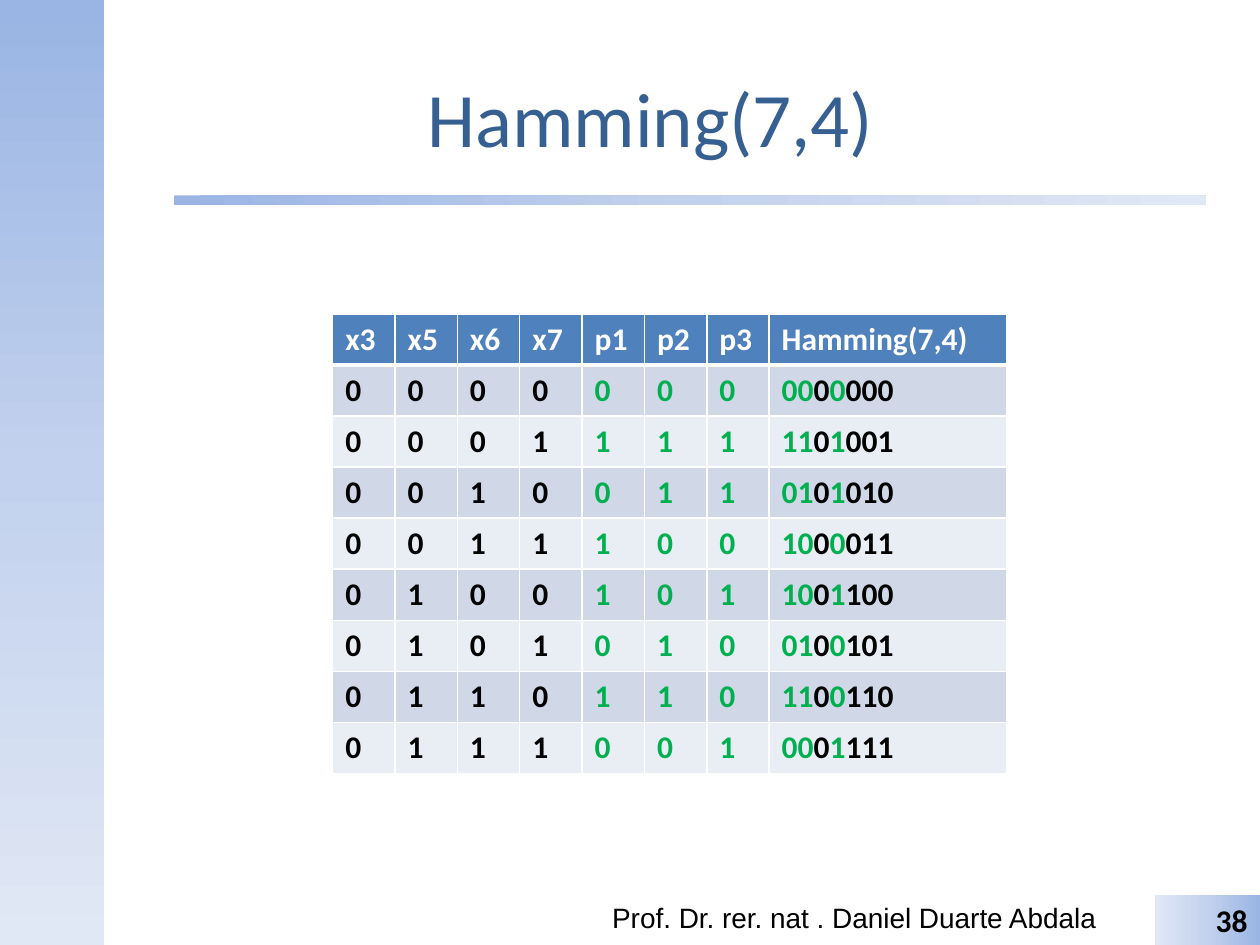
import copy
import itertools

import pptx
import pptx.dml.color
import pptx.enum.shapes
import pptx.enum.text
import pptx.oxml
import pptx.oxml.ns
import pptx.util

SLIDE_W, SLIDE_H = 10, 7.5
SHAPES = pptx.enum.shapes.MSO_SHAPE
ALIGN = pptx.enum.text.PP_ALIGN
MIDDLE = pptx.enum.text.MSO_ANCHOR.MIDDLE
GRADIENT = [(0, "9AB5E4"), (0.5, "C2D1ED"), (1, "E1E8F5")]
BLACK, WHITE, GREEN = "000000", "FFFFFF", "00B050"
HEADER_FILL, BAND_FILLS = "4F81BD", ("E9EDF4", "D0D8E8")
SIDE_W = 0.83  # width of the side band and of the page number tile
FOOTER_H = 0.4


def rgb(value):
    return pptx.dml.color.RGBColor.from_string(value)


def inches(box):
    return [pptx.util.Inches(length) for length in box]


def write(paragraph, pieces, align=ALIGN.LEFT, name="Calibri", size=18, bold=False):
    """Add (text, colour) pieces as runs of one paragraph."""
    paragraph.alignment = align
    font_values = {"name": name, "size": pptx.util.Pt(size), "bold": bold}
    for text, colour in pieces:
        run = paragraph.add_run()
        run.text = text
        run.font.color.rgb = rgb(colour)
        for key, value in font_values.items():
            setattr(run.font, key, value)


def gradient_bar(slide, box, kind, angle):
    """Add a bar whose gradient runs at a counter-clockwise angle."""
    bar = slide.shapes.add_shape(kind, *inches(box))
    bar.shadow.inherit = False
    bar.line.fill.background()
    bar.fill.gradient()
    bar.fill.gradient_angle = angle
    stop_list = bar._element.spPr.find(".//" + pptx.oxml.ns.qn("a:gsLst"))
    stop_list.append(copy.deepcopy(stop_list[-1]))
    for stop, (position, colour) in zip(bar.fill.gradient_stops, GRADIENT):
        stop.position = position
        stop.color.rgb = rgb(colour)
    return bar


def heading(slide, box):
    """Title with the rule below it."""
    left, top, width, height = box
    title = slide.shapes.title
    for key, value in zip(("left", "top", "width", "height"), inches(box)):
        setattr(title, key, value)
    title.text_frame.vertical_anchor = MIDDLE
    write(title.text_frame.paragraphs[0], [("Hamming(7,4)", "376092")],
          ALIGN.CENTER, size=44)
    gradient_bar(slide, (left + 0.55, top + height, 8.19, 0.08),
                 SHAPES.ROUNDED_RECTANGLE, 0)


def code_rows():
    """Cells of each row, with parity bits in green."""
    for x5, x6, x7 in itertools.product((0, 1), repeat=3):
        x3 = 0
        parity = [x3 ^ x5 ^ x7, x3 ^ x6 ^ x7, x5 ^ x6 ^ x7]
        p1, p2, p3 = parity
        data_cells = [[(str(bit), BLACK)] for bit in (x3, x5, x6, x7)]
        parity_cells = [[(str(bit), GREEN)] for bit in parity]
        codeword = [(f"{p1}{p2}", GREEN), (f"{x3}", BLACK),
                    (f"{p3}", GREEN), (f"{x5}{x6}{x7}", BLACK)]
        yield data_cells + parity_cells + [codeword]


def outline_cell(cell, bottom_width):
    properties = cell._tc.get_or_add_tcPr()
    sides = (("lnL", 1), ("lnR", 1), ("lnT", 1), ("lnB", bottom_width))
    for index, (side, width) in enumerate(sides):
        properties.insert(index, pptx.oxml.parse_xml(
            f'<a:{side} {pptx.oxml.ns.nsdecls("a")} w="{pptx.util.Pt(width)}">'
            f'<a:solidFill><a:srgbClr val="{WHITE}"/></a:solidFill></a:{side}>'))


def code_table(slide, box):
    names = ["x3", "x5", "x6", "x7", "p1", "p2", "p3", "Hamming(7,4)"]
    rows = [[[(name, WHITE)] for name in names], *code_rows()]
    bit_width = 0.495
    table = slide.shapes.add_table(len(rows), len(names), *inches(box)).table
    for column in table.columns:
        column.width = pptx.util.Inches(bit_width)
    table.columns[len(names) - 1].width = pptx.util.Inches(
        box[2] - bit_width * (len(names) - 1))
    for r, row in enumerate(rows):
        for c, pieces in enumerate(row):
            cell = table.cell(r, c)
            cell.fill.solid()
            cell.fill.fore_color.rgb = rgb(BAND_FILLS[r % 2] if r else HEADER_FILL)
            outline_cell(cell, 1 if r else 3)
            write(cell.text_frame.paragraphs[0], pieces, bold=True)


def footer(slide, box):
    """Author on the left, page number tile at the right end."""
    left, top, width, height = box
    author = slide.shapes.add_textbox(*inches((left, top, 4.19, height)))
    author.text_frame.word_wrap = True
    write(author.text_frame.paragraphs[0],
          [("Prof. Dr. rer. nat . Daniel Duarte Abdala", BLACK)],
          name="Arial", size=16)
    page = gradient_bar(slide, (left + width - SIDE_W, top, SIDE_W, height),
                        SHAPES.RECTANGLE, 180)
    page.text_frame.vertical_anchor = MIDDLE
    write(page.text_frame.paragraphs[0], [("38", BLACK)], ALIGN.RIGHT, bold=True)


def main():
    deck = pptx.Presentation()
    deck.slide_width, deck.slide_height = inches((SLIDE_W, SLIDE_H))
    slide = deck.slides.add_slide(deck.slide_layouts[5])
    # Side band
    gradient_bar(slide, (0, 0, SIDE_W, SLIDE_H), SHAPES.RECTANGLE, 270)
    heading(slide, (SIDE_W, 0.3, 8.67, 1.25))
    code_table(slide, (2.64, 2.49, 5.35, 3.65))
    footer(slide, (4.76, SLIDE_H - FOOTER_H, SLIDE_W - 4.76, FOOTER_H))
    deck.save("out.pptx")


if __name__ == "__main__":
    main()
